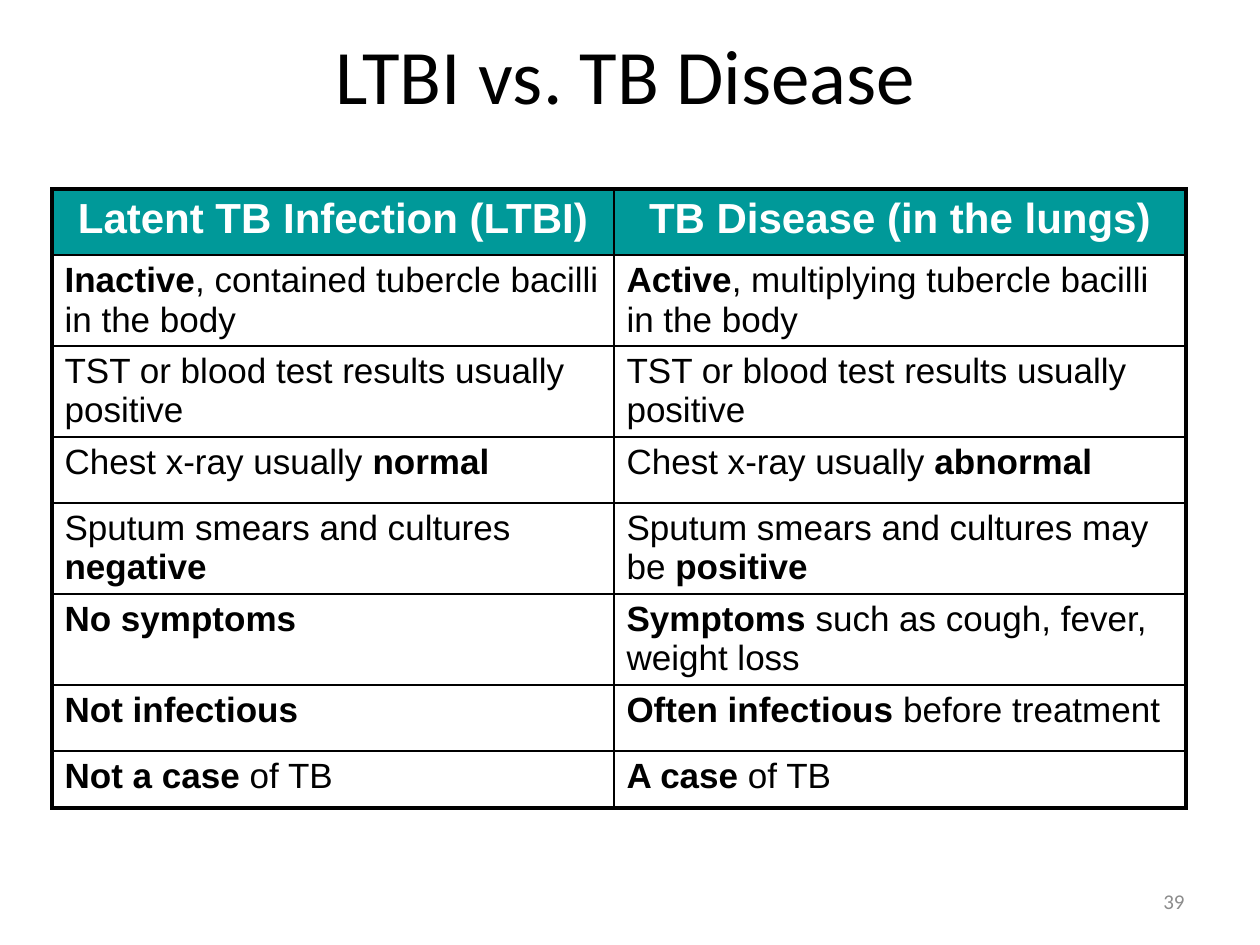
from dataclasses import dataclass

from lxml import etree
from pptx import Presentation
from pptx import util as u
from pptx.dml.color import RGBColor
from pptx.enum import text
from pptx.oxml import ns

PX = u.Inches(1) // 126
HEADINGS = ("Latent TB Infection (LTBI)", "TB Disease (in the lungs)")
COMPARISON = [
    ("*Inactive*, contained tubercle bacilli in the body",
     "*Active*, multiplying tubercle bacilli in the body"),
    ("TST or blood test results usually positive",
     "TST or blood test results usually positive"),
    ("Chest x-ray usually *normal*", "Chest x-ray usually *abnormal*"),
    ("Sputum smears and cultures *negative*",
     "Sputum smears and cultures may be *positive*"),
    ("*No symptoms*", "*Symptoms* such as cough, fever, weight loss"),
    ("*Not infectious*", "*Often infectious* before treatment"),
    ("*Not a case* of TB", "*A case* of TB"),
]
COLUMN_WIDTHS = (562, 572)
ROW_HEIGHTS = (66, 91, 91, 66, 91, 91, 66, 57)


@dataclass(frozen=True)
class Theme:
    """Colours, fonts and type sizes of the slide."""
    ink: str = "000000"
    header_fill: str = "009999"
    header_ink: str = "FFFFFF"
    number_ink: str = "8C8C8C"
    title_font: str = "Calibri"
    table_font: str = "Arial"
    title_size: int = 44
    header_size: int = 24
    body_size: int = 20
    number_size: int = 12
    outer_line: float = 2.25
    inner_line: float = 1


THEME = Theme()


def style(span, font, size, color, bold=False):
    """Format one run."""
    span.font.name = font
    span.font.size = u.Pt(size)
    span.font.bold = bold
    span.font.color.rgb = RGBColor.from_string(color)


def add_label(page, box, wording, size, color, align):
    """Place one vertically centred line of text in the box."""
    label = page.shapes.add_textbox(*(n * PX for n in box))
    frame = label.text_frame
    frame.word_wrap = True
    frame.vertical_anchor = text.MSO_ANCHOR.MIDDLE
    frame.text = wording
    para = frame.paragraphs[0]
    para.alignment = align
    style(para.runs[0], THEME.title_font, size, color)


def set_borders(cell, outer_sides):
    """Draw the four sides of a cell, heavier on the outer ones."""
    properties = cell._tc.get_or_add_tcPr()
    for side in "LRTB":
        width = THEME.outer_line if side in outer_sides else THEME.inner_line
        line = etree.SubElement(properties, ns.qn(f"a:ln{side}"), w=str(u.Pt(width)))
        fill = etree.SubElement(line, ns.qn("a:solidFill"))
        etree.SubElement(fill, ns.qn("a:srgbClr"), val=THEME.ink)


def fill_cell(cell, wording, is_header):
    """Write a cell, with the parts between asterisks in bold."""
    cell.margin_bottom = 0
    para = cell.text_frame.paragraphs[0]
    if is_header:
        cell.fill.solid()
        cell.fill.fore_color.rgb = RGBColor.from_string(THEME.header_fill)
        para.text = wording
        para.alignment = text.PP_ALIGN.CENTER
        style(para.runs[0], THEME.table_font, THEME.header_size, THEME.header_ink, True)
        return
    cell.fill.background()
    for index, part in enumerate(wording.split("*")):
        if part:
            span = para.add_run()
            span.text = part
            style(span, THEME.table_font, THEME.body_size, THEME.ink, index % 2 == 1)


def add_comparison(page, box):
    """Place the two-column comparison table in the box."""
    rows = [HEADINGS, *COMPARISON]
    last = len(rows) - 1
    table = page.shapes.add_table(len(rows), 2, *(n * PX for n in box)).table
    table.horz_banding = False
    for column, width in zip(table.columns, COLUMN_WIDTHS):
        column.width = width * PX
    for r, (wordings, height) in enumerate(zip(rows, ROW_HEIGHTS)):
        table.rows[r].height = height * PX
        for c, wording in enumerate(wordings):
            cell = table.cell(r, c)
            set_borders(cell, "LR"[c] + "T" * (r == 0) + "B" * (r == last))
            fill_cell(cell, wording, r == 0)


def main():
    """Build and save the deck."""
    deck = Presentation()
    deck.slide_width, deck.slide_height = 1260 * PX, 945 * PX
    page = deck.slides.add_slide(deck.slide_layouts[6])
    add_label(page, (903, 876, 294, 50), "39", THEME.number_size,
              THEME.number_ink, text.PP_ALIGN.RIGHT)
    add_label(page, (59, 21, 1134, 105), "LTBI vs. TB Disease", THEME.title_size,
              THEME.ink, text.PP_ALIGN.CENTER)
    add_comparison(page, (52, 189, sum(COLUMN_WIDTHS), sum(ROW_HEIGHTS)))
    deck.save("out.pptx")


if __name__ == "__main__":
    main()
